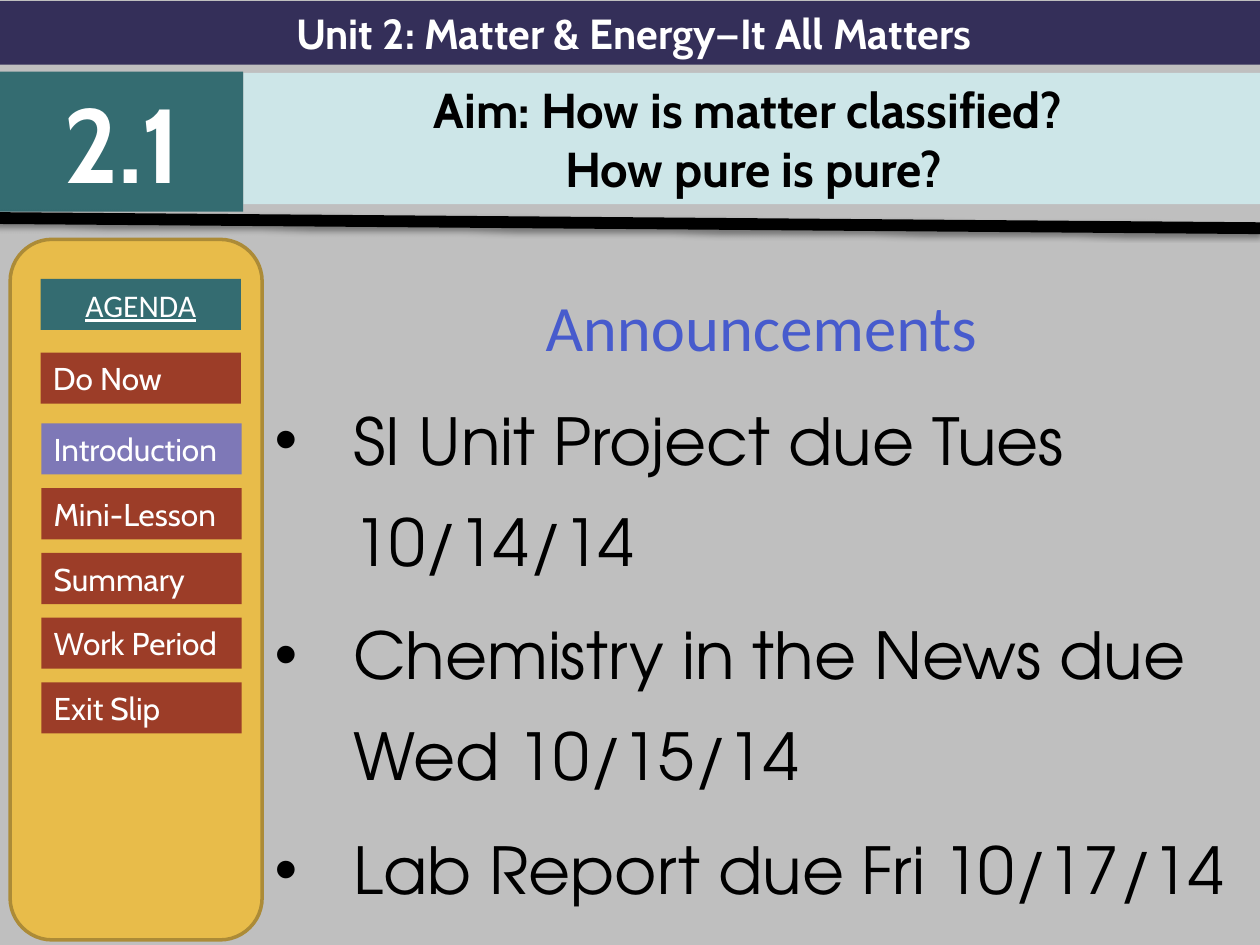
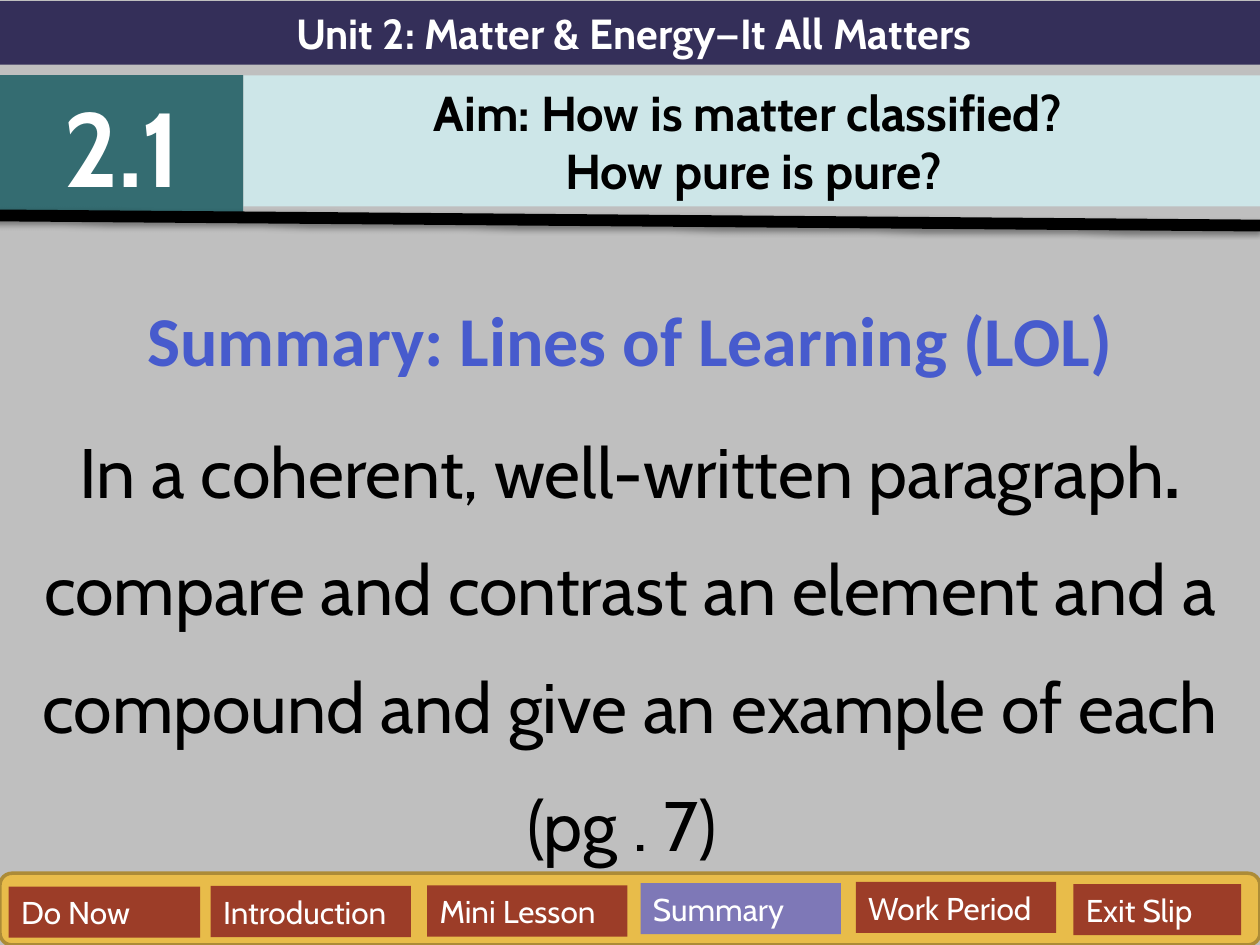
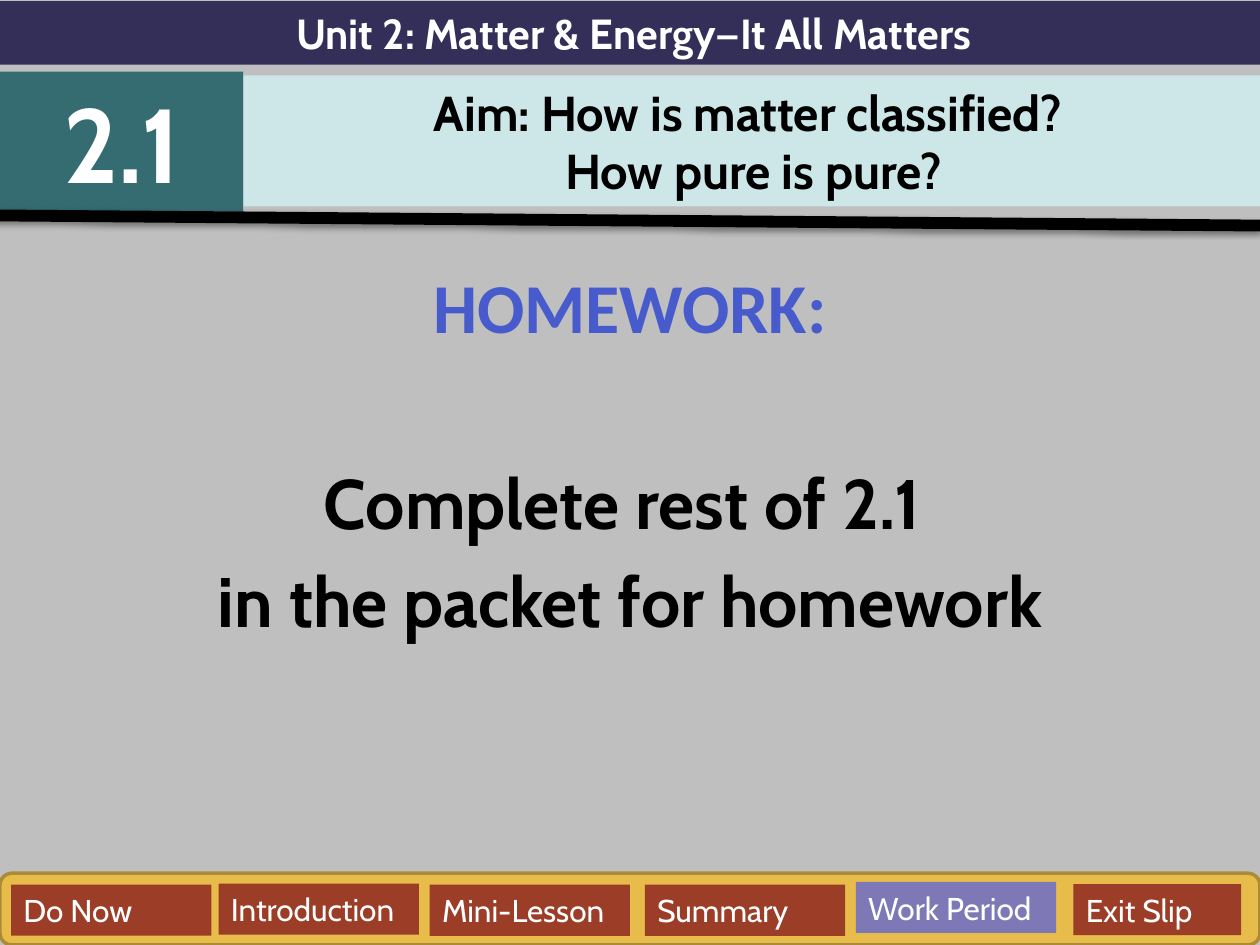
from dataclasses import dataclass

from lxml import etree
from pptx import Presentation
from pptx import util as u
from pptx.dml import color
from pptx.enum import shapes, text
from pptx.oxml import ns

Pt = u.Pt
CENTER, LEFT = text.PP_ALIGN.CENTER, text.PP_ALIGN.LEFT
RECT, ROUNDED = shapes.MSO_SHAPE.RECTANGLE, shapes.MSO_SHAPE.ROUNDED_RECTANGLE


@dataclass(frozen=True)
class Theme:
    page: str = "BFBFBF"
    unit: str = "342F59"
    teal: str = "346C71"
    aim: str = "CDE6E8"
    gold: str = "E8BC4A"
    gold_edge: str = "AC8B37"
    tab: str = "9C3D28"
    current: str = "7E78B7"
    heading: str = "475BCD"
    black: str = "000000"
    white: str = "FFFFFF"
    sans: str = "Cabin"
    plain: str = "Calibri"
    geometric: str = "TeX Gyre Adventor"
    tab_size: float = 18
    unit_size: float = 24
    aim_size: float = 28
    list_size: float = 37
    body_size: float = 40
    number_size: float = 60


THEME = Theme()


@dataclass(frozen=True)
class Frame:
    left: float
    top: float
    width: float
    height: float

    def lengths(self) -> list:
        return [Pt(n) for n in (self.left, self.top, self.width, self.height)]


@dataclass(frozen=True)
class Tab:
    label: str
    frame: Frame


@dataclass(frozen=True)
class Header:
    number_top: float
    aim_top: float
    rule_top: float


TAB_WIDTH, TAB_HEIGHT = 114.5, 29.2
SIDEBAR = Frame(5.8, 136.8, 144, 400.3)
FOOTER = Frame(0, 499, 720, 41)


# Building blocks
def rgb(value: str) -> color.RGBColor:
    return color.RGBColor.from_string(value)


def write(box, content: str, *, size: float, font: str = THEME.sans, ink: str = THEME.black,
          bold: bool = False, underline: bool = False, align=CENTER, spacing: float | None = None,
          before: float = 0, bullet: bool = False, inline: bool = False) -> None:
    """Add a paragraph to the box, or continue its last one when inline."""
    frame = box.text_frame
    para = frame.paragraphs[-1]
    if not inline:
        if para.runs:
            para = frame.add_paragraph()
        para.alignment = align
        para.space_before = Pt(before)
        if spacing:
            para.line_spacing = spacing
        if bullet:
            props = para._p.get_or_add_pPr()
            props.set("marL", str(Pt(45)))
            props.set("indent", str(-Pt(45)))
            etree.SubElement(props, ns.qn("a:buFont"), typeface="Arial")
            etree.SubElement(props, ns.qn("a:buChar"), char="•")
    span = para.add_run()
    span.text = content
    span.font.name, span.font.size = font, Pt(size)
    span.font.bold, span.font.underline = bold, underline
    span.font.color.rgb = rgb(ink)


def add_panel(parent, frame: Frame, fill: str, kind=RECT, edge: str | None = None):
    box = parent.shapes.add_shape(kind, *frame.lengths())
    box.shadow.inherit = False
    box.fill.solid()
    box.fill.fore_color.rgb = rgb(fill)
    if edge:
        box.line.color.rgb = rgb(edge)
        box.line.width = Pt(2)
    else:
        box.line.fill.background()
    box.text_frame.word_wrap = True
    return box


def add_label(parent, frame: Frame, fill: str, content: str, **style) -> None:
    box = add_panel(parent, frame, fill)
    box.text_frame.auto_size = text.MSO_AUTO_SIZE.SHAPE_TO_FIT_TEXT
    write(box, content, ink=THEME.white, **style)


def add_body(page, frame: Frame):
    box = page.shapes.add_textbox(*frame.lengths())
    box.text_frame.word_wrap = True
    return box


# Parts shared by the slides
def add_rule(page, top: float) -> None:
    rule = page.shapes.add_connector(shapes.MSO_CONNECTOR.STRAIGHT,
                                     Pt(-3.6), Pt(top), Pt(720), Pt(top + 5.8))
    rule.line.color.rgb = rgb(THEME.black)
    rule.line.width = Pt(6.75)
    effects = etree.SubElement(rule._element.spPr, ns.qn("a:effectLst"))
    shadow = etree.SubElement(effects, ns.qn("a:outerShdw"), blurRad=str(Pt(3.1)),
                              dist=str(Pt(1.6)), dir="5400000", rotWithShape="0")
    shade = etree.SubElement(shadow, ns.qn("a:srgbClr"), val=THEME.black)
    etree.SubElement(shade, ns.qn("a:alpha"), val="38000")


def add_page(deck, header: Header):
    page = deck.slides.add_slide(deck.slide_layouts[5])
    aim = page.shapes.title
    aim.left, aim.top, aim.width, aim.height = Frame(139, header.aim_top, 583.2, 75).lengths()
    aim.fill.solid()
    aim.fill.fore_color.rgb = rgb(THEME.aim)
    aim.text_frame.auto_size = text.MSO_AUTO_SIZE.NONE
    for line in ("Aim: How is matter classified? ", "How pure is pure?"):
        write(aim, line, size=THEME.aim_size, bold=True)
    add_label(page, Frame(0, 0.7, 724.3, 36.3), THEME.unit,
              "Unit 2: Matter & Energy—It All Matters", size=THEME.unit_size, bold=True)
    add_label(page, Frame(0, header.number_top, 139, 80), THEME.teal, "2.1",
              size=THEME.number_size, bold=True)
    add_rule(page, header.rule_top)
    return page


def add_agenda(page, panel: Frame, tabs: list[Tab], current: str):
    group = page.shapes.add_group_shape()
    add_panel(group, panel, THEME.gold, ROUNDED, THEME.gold_edge)
    for tab in tabs:
        fill = THEME.current if tab.label == current else THEME.tab
        add_label(group, tab.frame, fill, tab.label, size=THEME.tab_size, align=LEFT)
    return group


def footer_tab(label: str, left: float, top: float, width: float = TAB_WIDTH) -> Tab:
    return Tab(label, Frame(left, top, width, TAB_HEIGHT))


# Slides
def add_announcements(deck) -> None:
    page = add_page(deck, Header(41, 41.6, 124.6))
    labels = ["Introduction", "Mini-Lesson", "Summary", "Work Period", "Exit Slip"]
    tabs = [Tab("Do Now", Frame(23.2, 201.5, TAB_WIDTH, TAB_HEIGHT))]
    tabs += [Tab(label, Frame(23.6, 242 + 37 * row, TAB_WIDTH, TAB_HEIGHT))
             for row, label in enumerate(labels)]
    agenda = add_agenda(page, SIDEBAR, tabs, "Introduction")
    add_label(agenda, Frame(23.2, 159.4, TAB_WIDTH, TAB_HEIGHT), THEME.teal, "AGENDA",
              size=THEME.tab_size, font=THEME.plain, underline=True)

    body = add_body(page, Frame(149.8, 146.9, 570.2, 393.1))
    style = dict(size=THEME.list_size, spacing=1.3, before=7.4)
    write(body, "Announcements", font=THEME.plain, ink=THEME.heading, **style)
    for item in ("SI Unit Project due Tues 10/14/14",
                 "Chemistry in the News due Wed 10/15/14",
                 "Lab Report due Fri 10/17/14"):
        write(body, item, font=THEME.geometric, align=LEFT, bullet=True, **style)


def add_summary(deck) -> None:
    page = add_page(deck, Header(43, 43, 123.1))
    body = add_body(page, Frame(0, 146.9, 720, 358.6))
    style = dict(size=THEME.body_size, spacing=1.4, before=8)
    write(body, "Summary: Lines of Learning (LOL)", font=THEME.plain, ink=THEME.heading,
          bold=True, **style)
    write(body, "In a coherent, well-written paragraph", **style)
    write(body, ". ", size=THEME.body_size, bold=True, inline=True)
    write(body, "compare and contrast an element and a compound and give an example "
          "of each (pg . 7) ", size=THEME.body_size, inline=True)
    add_agenda(page, FOOTER, [
        footer_tab("Do Now", 5, 506.6, 109.4),
        footer_tab("Introduction", 120.4, 506.3),
        footer_tab("Mini Lesson", 244.1, 506),
        footer_tab("Summary", 366, 504.7),
        footer_tab("Work Period", 489, 504),
        footer_tab("Exit Slip", 613.4, 505.2, 95.8),
    ], "Summary")


def add_homework(deck) -> None:
    page = add_page(deck, Header(41, 43, 123.1))
    body = add_body(page, Frame(0, 146.9, 720, 393.1))
    style = dict(size=THEME.body_size, bold=True)
    write(body, "HOMEWORK:", font=THEME.plain, ink=THEME.heading, before=8, **style)
    write(body, "Complete rest of 2.1 ", before=64, **style)
    write(body, "in the packet for homework", before=8, **style)
    add_agenda(page, FOOTER, [
        footer_tab("Do Now", 6.3, 505.5),
        footer_tab("Introduction", 124.9, 504.9),
        footer_tab("Mini-Lesson", 245.5, 505.6),
        footer_tab("Summary", 368.5, 505.6),
        footer_tab("Work Period", 489, 504),
        footer_tab("Exit Slip", 613.4, 505.2, 95.8),
    ], "Work Period")


def main() -> None:
    deck = Presentation()
    deck.slide_width, deck.slide_height = Pt(720), Pt(540)
    backdrop = deck.slide_master.background.fill
    backdrop.solid()
    backdrop.fore_color.rgb = rgb(THEME.page)
    add_announcements(deck)
    add_summary(deck)
    add_homework(deck)
    deck.save("out.pptx")


if __name__ == "__main__":
    main()
